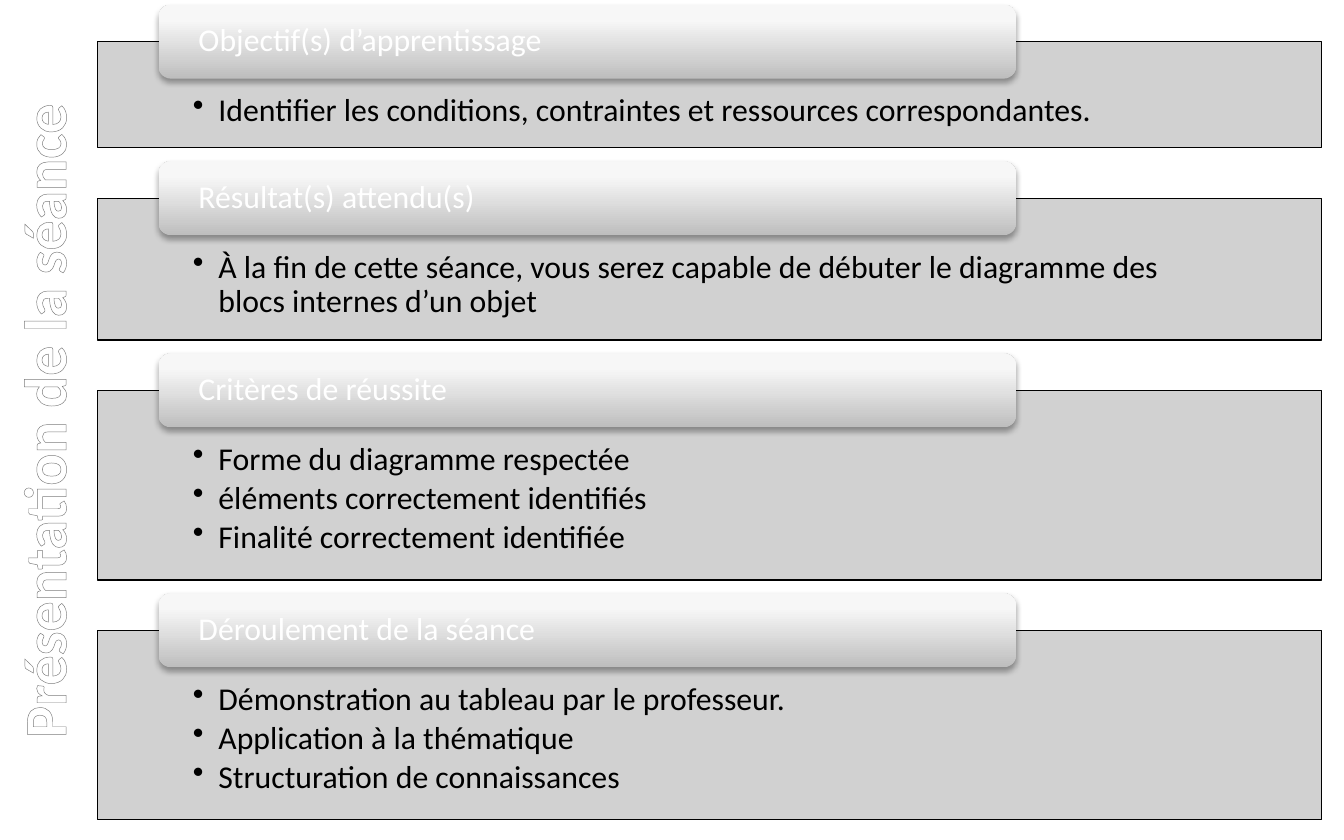
from lxml import etree
from pptx import Presentation
from pptx.dml.color import RGBColor
from pptx.enum.shapes import MSO_SHAPE
from pptx.enum.text import MSO_ANCHOR, PP_ALIGN
from pptx.oxml import parse_xml
from pptx.oxml.ns import nsdecls, qn
from pptx.util import Inches, Pt

RECTANGLE, ROUNDED = MSO_SHAPE.RECTANGLE, MSO_SHAPE.ROUNDED_RECTANGLE
TOP, MIDDLE = MSO_ANCHOR.TOP, MSO_ANCHOR.MIDDLE
LEFT, CENTER = PP_ALIGN.LEFT, PP_ALIGN.CENTER
COLUMNS, ROWS = 100, 62.5
FONT = "Calibri"
COLORS = {"panel": "CCCCCC", "ink": "000000", "heading": "FFFFFF", "outline": "7D7D7D"}
TAB_STOPS = [(0, "BEBEBE"), (80, "F7F7F7"), (100, "F8F8F8")]
TITLE_STOPS = [(0, "FFFFFF"), (9, "FFFFFF"), (50, "7F7F7F"), (79, "FFFFFF"), (100, "FFFFFF")]
TITLE = "Présentation de la séance"
SECTIONS = [
    ("Objectif(s) d’apprentissage", 7.9,
     ["Identifier les conditions, contraintes et ressources correspondantes."]),
    ("Résultat(s) attendu(s)", 10.55,
     ["À la fin de cette séance, vous serez capable de débuter le diagramme "
      "des blocs internes d’un objet"]),
    ("Critères de réussite", 14.1,
     ["Forme du diagramme respectée", "éléments correctement identifiés",
      "Finalité correctement identifiée"]),
    ("Déroulement de la séance", 14.1,
     ["Démonstration au tableau par le professeur.", "Application à la thématique",
      "Structuration de connaissances"]),
]
FIRST_ROW, GAP, TAB_RISE = 3.1, 3.75, 2.75


def gradient(stops, angle):
    """Return a linear gradient fill element."""
    marks = "".join(f'<a:gs pos="{share * 1000}"><a:srgbClr val="{color}"/></a:gs>'
                    for share, color in stops)
    return parse_xml(f'<a:gradFill {nsdecls("a")} rotWithShape="1"><a:gsLst>{marks}</a:gsLst>'
                     f'<a:lin ang="{angle * 60000}" scaled="0"/></a:gradFill>')


class SessionSlide:
    """Holds the style and the current slide, and draws its elements."""

    def __init__(self, presentation):
        self.slide = presentation.slides.add_slide(presentation.slide_layouts[6])
        self.column = presentation.slide_width / COLUMNS
        self.row = presentation.slide_height / ROWS

    def place(self, left, top, width, height):
        """Turn grid positions into lengths."""
        return [round(value * unit) for value, unit in
                zip((left, top, width, height), (self.column, self.row) * 2)]

    def block(self, preset, area, color):
        """Add a filled preset shape."""
        block = self.slide.shapes.add_shape(preset, *self.place(*area))
        block.shadow.inherit = False
        block.fill.solid()
        block.fill.fore_color.rgb = RGBColor.from_string(color)
        return block

    def fill_text(self, block, lines, color, margins, anchor, gap=0, bullet=False):
        """Put paragraphs into a shape."""
        frame = block.text_frame
        frame.word_wrap = True
        frame.vertical_anchor = anchor
        frame.margin_left, frame.margin_top, frame.margin_right, frame.margin_bottom = map(
            Inches, margins)
        for index, line in enumerate(lines):
            paragraph = frame.paragraphs[0] if index == 0 else frame.add_paragraph()
            paragraph.text = line
            if bullet:
                properties = paragraph._p.get_or_add_pPr()
                properties.set("marL", str(Inches(0.19)))
                properties.set("indent", str(-Inches(0.19)))
                etree.SubElement(properties, qn("a:buChar"), char="•")
            paragraph.alignment = LEFT
            paragraph.line_spacing = 0.9
            paragraph.space_after = Pt(gap)
            paragraph.font.name = FONT
            paragraph.font.size = Pt(17)
            paragraph.font.color.rgb = RGBColor.from_string(color)

    def title(self, text, area):
        """Add the vertical outlined title."""
        heading = self.slide.shapes.add_textbox(*self.place(*area))
        heading.rotation = 270
        frame = heading.text_frame
        frame.word_wrap = True
        frame.vertical_anchor = MIDDLE
        paragraph = frame.paragraphs[0]
        paragraph.alignment = CENTER
        run = paragraph.add_run()
        run.text = text
        run.font.name, run.font.size, run.font.bold = FONT, Pt(32), True
        outline = parse_xml(
            f'<a:ln {nsdecls("a")} w="{Pt(0.83)}"><a:solidFill>'
            f'<a:srgbClr val="{COLORS["outline"]}"/></a:solidFill></a:ln>')
        properties = run._r.get_or_add_rPr()
        properties.insert(0, outline)
        properties.insert(1, gradient(TITLE_STOPS, 90))

    def panel(self, lines, area):
        """Add a translucent panel of bullets."""
        panel = self.block(RECTANGLE, area, COLORS["panel"])
        fill_color = panel._element.spPr.find(f'{qn("a:solidFill")}/{qn("a:srgbClr")}')
        etree.SubElement(fill_color, qn("a:alpha"), val="90000")
        panel.line.color.rgb = RGBColor.from_string(COLORS["ink"])
        panel.line.width = Pt(0.75)
        self.fill_text(panel, lines, COLORS["ink"], (0.71, 0.39, 0.71, 0.13), TOP, 2.5, True)

    def tab(self, heading, area):
        """Add a shaded heading tab."""
        tab = self.block(ROUNDED, area, COLORS["panel"])
        tab.line.fill.background()
        properties = tab._element.spPr
        properties.replace(properties.find(qn("a:solidFill")), gradient(TAB_STOPS, 270))
        properties.find(qn("a:effectLst")).append(parse_xml(
            f'<a:outerShdw {nsdecls("a")} blurRad="{Pt(3.1)}" dist="{Pt(1.8)}" dir="5400000" '
            f'rotWithShape="0"><a:srgbClr val="{COLORS["ink"]}"><a:alpha val="35000"/>'
            '</a:srgbClr></a:outerShdw>'))
        self.fill_text(tab, [heading], COLORS["heading"], (0.27, 0, 0.27, 0), MIDDLE)


def main():
    """Build and save the session overview."""
    presentation = Presentation()
    presentation.slide_width, presentation.slide_height = Inches(10), Inches(6.25)
    overview = SessionSlide(presentation)
    overview.title(TITLE, (-28.1, 28.1, 62.5, 6.4))
    top = FIRST_ROW
    for heading, height, lines in SECTIONS:
        overview.panel(lines, (7.25, top, 91.1, height))
        overview.tab(heading, (11.8, top - TAB_RISE, 63.8, 5.5))
        top += height + GAP
    presentation.save("out.pptx")


if __name__ == "__main__":
    main()
